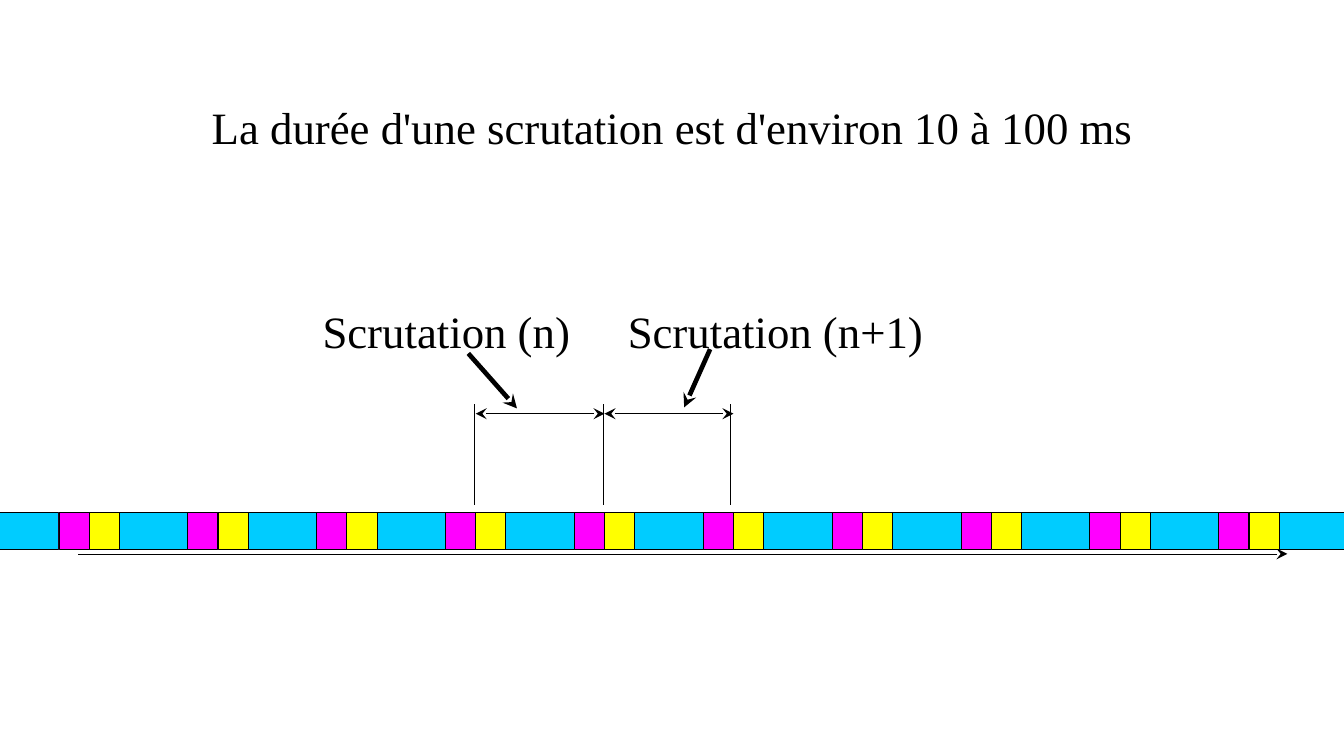
from dataclasses import dataclass

from lxml.etree import SubElement
from pptx import Presentation
from pptx.dml.color import RGBColor
from pptx.enum.shapes import MSO_CONNECTOR, MSO_SHAPE
from pptx.enum.text import MSO_ANCHOR, MSO_AUTO_SIZE, PP_ALIGN
from pptx.oxml.ns import qn
from pptx.util import Cm, Pt


@dataclass(frozen=True)
class Theme:
    font: str = "Times New Roman"
    text_size: float = 24
    ink: RGBColor = RGBColor(0x00, 0x00, 0x00)
    paper: RGBColor = RGBColor(0xFF, 0xFF, 0xFF)
    cyan: RGBColor = RGBColor(0x00, 0xCC, 0xFF)
    magenta: RGBColor = RGBColor(0xFF, 0x00, 0xFF)
    yellow: RGBColor = RGBColor(0xFF, 0xFF, 0x00)


class SlideBuilder:
    def __init__(self, prs, theme):
        self.theme = theme
        self.s = prs.slides.add_slide(prs.slide_layouts[5])
        self.shapes = self.s.shapes
        fill = self.s.background.fill
        fill.solid()
        fill.fore_color.rgb = theme.paper

    def start_group(self):
        """Put the following elements in a new group."""
        self.shapes = self.s.shapes.add_group_shape().shapes

    def set_text(self, sp, text, wrap):
        tf = sp.text_frame
        frame_format = {
            "word_wrap": wrap,
            "auto_size": MSO_AUTO_SIZE.SHAPE_TO_FIT_TEXT,
            "vertical_anchor": MSO_ANCHOR.TOP,
        }
        for name, value in frame_format.items():
            setattr(tf, name, value)
        p = tf.paragraphs[0]
        p.alignment = PP_ALIGN.CENTER
        r = p.add_run()
        r.text = text
        font_format = {"name": self.theme.font, "size": Pt(self.theme.text_size)}
        for name, value in font_format.items():
            setattr(r.font, name, value)
        r.font.color.rgb = self.theme.ink

    def title(self, text, left, top, width, height):
        sp = self.s.shapes.title
        place = {"left": left, "top": top, "width": width, "height": height}
        for name, value in place.items():
            setattr(sp, name, Cm(value))
        self.set_text(sp, text, True)

    def label(self, text, left, top, width, height):
        sp = self.shapes.add_textbox(Cm(left), Cm(top), Cm(width), Cm(height))
        self.set_text(sp, text, False)

    def box(self, left, top, width, height, color):
        sp = self.shapes.add_shape(
            MSO_SHAPE.RECTANGLE, Cm(left), Cm(top), Cm(width), Cm(height))
        sp.shadow.inherit = False
        sp.fill.solid()
        sp.fill.fore_color.rgb = color
        sp.line.color.rgb = self.theme.ink
        sp.line.width = Pt(0.5)

    def line(self, x1, y1, x2, y2, width, ends=()):
        """Draw a line; ends may hold headEnd and tailEnd, in that order."""
        sp = self.shapes.add_connector(
            MSO_CONNECTOR.STRAIGHT, Cm(x1), Cm(y1), Cm(x2), Cm(y2))
        sp.line.color.rgb = self.theme.ink
        sp.line.width = Pt(width)
        sp_pr = sp._element.spPr
        ln = sp_pr.find(qn("a:ln"))
        for end in ends:
            SubElement(ln, qn(f"a:{end}"), type="stealth")
        SubElement(sp_pr, qn("a:effectLst"))


SLIDE_W, SLIDE_H = 25.4, 14.29
CYCLES = 10
BAND_LEFT, BAND_TOP, BAND_H = -0.18, 9.68, 0.71
PITCH = 21.92 / 9
SHORT_W = 0.57
LONG_W = PITCH - 2 * SHORT_W
TAIL = ("tailEnd",)
BOTH = ("headEnd", "tailEnd")


def main():
    prs = Presentation()
    prs.slide_width, prs.slide_height = Cm(SLIDE_W), Cm(SLIDE_H)
    theme = Theme()
    b = SlideBuilder(prs, theme)

    # Title and time axis
    b.title("La durée d'une scrutation est d'environ 10 à 100 ms",
            0, 1.75, SLIDE_W, 1.27)
    b.line(1.48, 10.47, 24.33, 10.47, 0.25, TAIL)

    # Band of repeated cycles, closed by one more long phase
    b.start_group()
    phases = [(LONG_W, theme.cyan), (SHORT_W, theme.magenta),
              (SHORT_W, theme.yellow)]
    x = BAND_LEFT
    for width, color in phases * CYCLES + phases[:1]:
        b.box(x, BAND_TOP, width, BAND_H, color)
        x += width

    # Limits and spans of two scans
    b.start_group()
    for x in (8.97, 11.41, 13.8):
        b.line(x, 9.54, x, 7.64, 0.5)
    for i in range(2):
        x = 8.99 + i * PITCH
        b.line(x, 7.82, x + PITCH, 7.82, 0.75, BOTH)

    # Names of the scans with their pointers
    b.label("Scrutation (n)", 5.82, 5.61, 5.23, 1.3)
    b.label("Scrutation (n+1)", 11.58, 5.61, 6.15, 1.3)
    b.line(8.85, 6.68, 9.77, 7.72, 2.5, TAIL)
    b.line(13.42, 6.6, 12.93, 7.7, 2.5, TAIL)

    prs.save("out.pptx")


if __name__ == "__main__":
    main()
